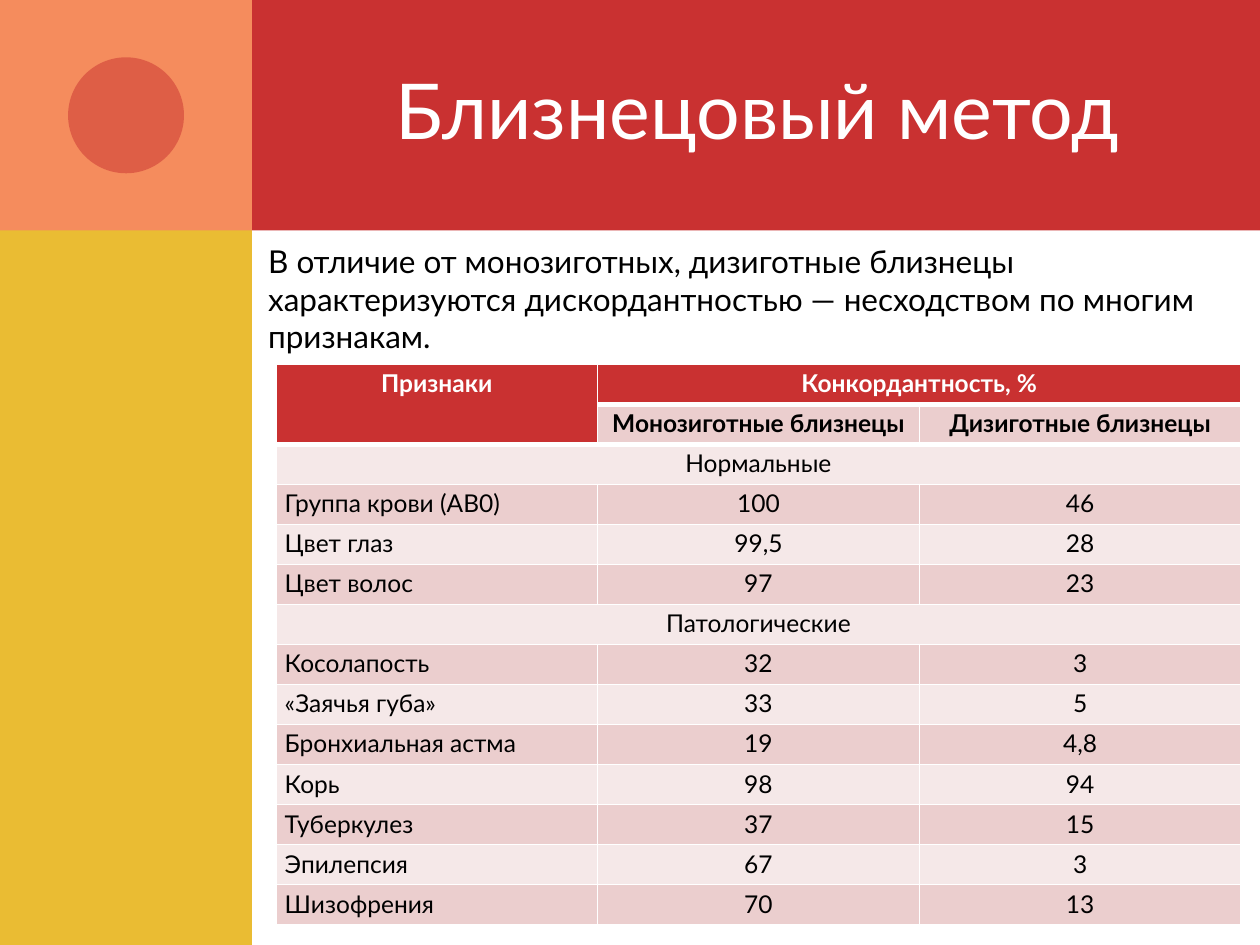
"""Build the slide on the twin method with its concordance table."""
from lxml import etree
from pptx import Presentation
from pptx.dml.color import RGBColor
from pptx.enum.shapes import MSO_SHAPE
from pptx.enum.text import MSO_ANCHOR, PP_ALIGN
from pptx.oxml.ns import qn
from pptx.util import Inches, Pt

RECT, OVAL = MSO_SHAPE.RECTANGLE, MSO_SHAPE.OVAL
LEFT, CENTER = PP_ALIGN.LEFT, PP_ALIGN.CENTER
TOP, MIDDLE = MSO_ANCHOR.TOP, MSO_ANCHOR.MIDDLE

RED = RGBColor(0xC9, 0x31, 0x31)
YELLOW = RGBColor(0xEA, 0xBC, 0x33)
ORANGE = RGBColor(0xF5, 0x8C, 0x5D)
DARK_BAND = RGBColor(0xEB, 0xCE, 0xCE)
LIGHT_BAND = RGBColor(0xF5, 0xE8, 0xE8)
WHITE = RGBColor(0xFF, 0xFF, 0xFF)
BLACK = RGBColor(0, 0, 0)
FONT = "Lato"

TITLE = "Близнецовый метод"
INTRO = ("В отличие от монозиготных, дизиготные близнецы характеризуются "
         "дискордантностью — несходством по многим признакам.")
ROWS = [
    ("Признаки", "Конкордантность, %", ""),
    ("", "Монозиготные близнецы", "Дизиготные близнецы"),
    ("Нормальные", "", ""),
    ("Группа крови (АВ0)", "100", "46"),
    ("Цвет глаз", "99,5", "28"),
    ("Цвет волос", "97", "23"),
    ("Патологические", "", ""),
    ("Косолапость", "32", "3"),
    ("«Заячья губа»", "33", "5"),
    ("Бронхиальная астма", "19", "4,8"),
    ("Корь", "98", "94"),
    ("Туберкулез", "37", "15"),
    ("Эпилепсия", "67", "3"),
    ("Шизофрения", "70", "13"),
]
HEADER_ROWS = 2
HEADER_MERGES = [((0, 0), (1, 0)), ((0, 1), (0, 2))]

W, H = 10, 7.5
SIDE, BANNER, DOT = 2, 1.83, 0.92
TEXT_X = 2.03
TEXT_W = W - TEXT_X
TABLE_X, TABLE_Y, TABLE_W, TABLE_H = 2.19, 2.89, 7.66, 4.45
PANELS = [
    (RECT, 0.5, 0, W - 0.5, BANNER, RED, None),
    (RECT, 0, 0, SIDE, H, YELLOW, None),
    (RECT, 0, 0, SIDE, BANNER, ORANGE, None),
    (OVAL, (SIDE - DOT) / 2, (BANNER - DOT) / 2, DOT, DOT, RED, 50),
]


def add_panel(s, kind, x, y, w, h, color, alpha):
    sp = s.shapes.add_shape(kind, Inches(x), Inches(y), Inches(w), Inches(h))
    sp.shadow.inherit = False
    sp.line.fill.background()
    sp.fill.solid()
    sp.fill.fore_color.rgb = color
    if alpha is not None:
        clr = sp.fill._xPr.find(qn("a:solidFill"))[0]
        etree.SubElement(clr, qn("a:alpha"), val=str(alpha * 1000))


def write(tf, text, size=14, color=BLACK, bold=False, align=LEFT,
          spacing=None, before=None):
    tf.word_wrap = True
    p = tf.paragraphs[0]
    p.alignment, p.line_spacing = align, spacing
    if before:
        p.space_before = Pt(before)
    r = p.add_run()
    r.text = text
    r.font.name, r.font.size, r.font.bold = FONT, Pt(size), bold
    r.font.color.rgb = color


def add_text(s, text, y, h, anchor=TOP, **fmt):
    box = s.shapes.add_textbox(Inches(TEXT_X), Inches(y), Inches(TEXT_W), Inches(h))
    box.text_frame.vertical_anchor = anchor
    write(box.text_frame, text, **fmt)


def set_borders(cell, bottom):
    tc_pr = cell._tc.get_or_add_tcPr()
    for side, width in (("L", 1), ("R", 1), ("T", 1), ("B", bottom)):
        ln = etree.SubElement(tc_pr, qn(f"a:ln{side}"), w=str(Pt(width)))
        fill = etree.SubElement(ln, qn("a:solidFill"))
        etree.SubElement(fill, qn("a:srgbClr"), val=str(WHITE))


def add_table(s):
    n_rows, n_cols = len(ROWS), len(ROWS[0])
    table = s.shapes.add_table(n_rows, n_cols, Inches(TABLE_X), Inches(TABLE_Y),
                               Inches(TABLE_W), Inches(TABLE_H)).table
    for col in table.columns:
        col.width = Inches(TABLE_W / n_cols)
    for row in table.rows:
        row.height = Inches(TABLE_H / n_rows)
    for i, texts in enumerate(ROWS):
        header, section = i < HEADER_ROWS, not any(texts[1:])
        for j, text in enumerate(texts):
            red = i == 0 or header and j == 0
            cell = table.cell(i, j)
            cell.margin_left = cell.margin_right = Inches(0.07)
            cell.margin_top = cell.margin_bottom = 0
            set_borders(cell, 3 if red else 1)
            cell.fill.solid()
            cell.fill.fore_color.rgb = RED if red else DARK_BAND if i % 2 else LIGHT_BAND
            if text:
                write(cell.text_frame, text, color=WHITE if red else BLACK, bold=header,
                      align=CENTER if header or section or j else LEFT, spacing=1.15)
        if section:
            table.cell(i, 0).merge(table.cell(i, n_cols - 1))
    for first, last in HEADER_MERGES:
        table.cell(*first).merge(table.cell(*last))


def main():
    prs = Presentation()
    prs.slide_width, prs.slide_height = Inches(W), Inches(H)
    s = prs.slides.add_slide(prs.slide_layouts[6])
    for panel in PANELS:
        add_panel(s, *panel)
    add_text(s, TITLE, 0, 1.72, anchor=MIDDLE, size=44, color=WHITE, align=CENTER)
    add_text(s, INTRO, 1.87, 1.33, size=18, before=18)
    add_table(s)
    prs.save("out.pptx")


if __name__ == "__main__":
    main()
